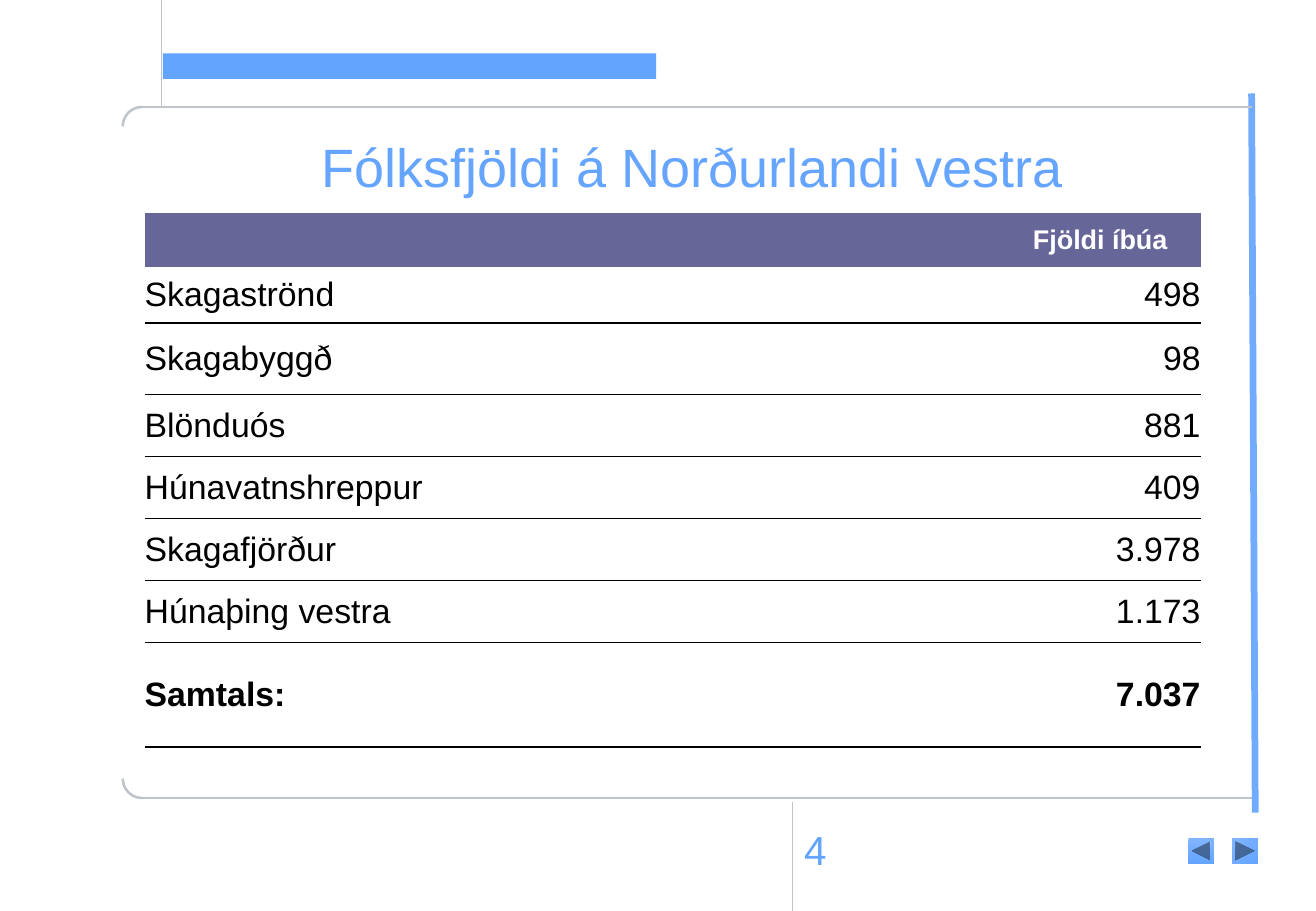
from dataclasses import dataclass

from lxml import etree
from pptx import Presentation
from pptx.dml.color import RGBColor
from pptx.enum.shapes import MSO_CONNECTOR, MSO_SHAPE
from pptx.enum.text import MSO_ANCHOR, MSO_AUTO_SIZE, PP_ALIGN
from pptx.oxml.ns import qn
from pptx.util import Pt

PX = 9144  # 100 px to the inch
STRAIGHT = MSO_CONNECTOR.STRAIGHT
ARC, BAR = MSO_SHAPE.ARC, MSO_SHAPE.RECTANGLE
NEXT = MSO_SHAPE.ACTION_BUTTON_FORWARD_OR_NEXT
PREVIOUS = MSO_SHAPE.ACTION_BUTTON_BACK_OR_PREVIOUS
LEFT, CENTER, RIGHT = PP_ALIGN.LEFT, PP_ALIGN.CENTER, PP_ALIGN.RIGHT
MIDDLE = MSO_ANCHOR.MIDDLE
NO_AUTOFIT = MSO_AUTO_SIZE.NONE


@dataclass(frozen=True)
class Theme:
    font: str = "Arial"
    accent: str = "63A4FF"
    title: str = "65A5FF"
    edge: str = "70ABFF"
    button_light: str = "80B4FF"
    frame: str = "BFC4CB"
    header: str = "666699"
    ink: str = "000000"
    paper: str = "FFFFFF"
    title_size: int = 32
    number_size: int = 24
    body_size: int = 20
    header_size: int = 16


THEME = Theme()
HEADER = ("", "Fjöldi íbúa")
POPULATION = [
    ("Skagaströnd", "498"),
    ("Skagabyggð", "98"),
    ("Blönduós", "881"),
    ("Húnavatnshreppur", "409"),
    ("Skagafjörður", "3.978"),
    ("Húnaþing vestra", "1.173"),
]
TOTAL = ("Samtals:", "7.037")
COLUMN_WIDTHS = (704, 165)
ROW_HEIGHTS = (45, 46, 59, 51, 51, 51, 51, 86)


def emu(*lengths):
    return [length * PX for length in lengths]


def rgb(color):
    return RGBColor.from_string(color)


def write(frame, text, size, color, align=LEFT, bold=False):
    frame.text = text
    paragraph = frame.paragraphs[0]
    paragraph.alignment = align
    for run in paragraph.runs:
        run.font.name, run.font.size, run.font.bold = THEME.font, Pt(size), bold
        run.font.color.rgb = rgb(color)


def add_rule(slide, start, end, color, width):
    rule = slide.shapes.add_connector(STRAIGHT, *emu(*start, *end))
    rule.line.color.rgb = rgb(color)
    rule.line.width = Pt(width)
    etree.SubElement(rule._element.spPr, qn("a:effectLst"))


def add_corner(slide, left, top, size, start_degrees):
    """Draw a quarter circle running clockwise from start_degrees."""
    corner = slide.shapes.add_shape(ARC, *emu(left, top, size, size))
    for index, degrees in enumerate((start_degrees, start_degrees + 90)):
        corner.adjustments[index] = degrees * 0.6
    corner.shadow.inherit = False
    corner.fill.background()
    corner.line.color.rgb = rgb(THEME.frame)
    corner.line.width = Pt(1.5)


def add_frame(slide, left, top, width, height):
    diameter = 32
    right, bottom = left + width, top + height
    rule_left = left + diameter // 2
    add_corner(slide, left, top, diameter, 180)
    add_corner(slide, left, bottom - diameter, diameter, 90)
    add_rule(slide, (rule_left, bottom), (right, bottom), THEME.frame, 1.5)
    add_rule(slide, (right, top - 11), (right + 3, bottom + 12), THEME.edge, 4)
    add_rule(slide, (rule_left, top), (right, top), THEME.frame, 1.5)


def add_header_bar(slide, left, top, width, height):
    add_rule(slide, (left - 1, 0), (left - 1, 88), THEME.frame, 0.75)
    bar = slide.shapes.add_shape(BAR, *emu(left, top, width, height))
    bar.shadow.inherit = False
    bar.fill.solid()
    bar.fill.fore_color.rgb = rgb(THEME.accent)
    bar.line.fill.background()


def add_button(slide, kind, left, top, size, angle):
    button = slide.shapes.add_shape(kind, *emu(left, top, size, size))
    button.shadow.inherit = False
    button.fill.gradient()
    button.fill.gradient_angle = angle
    for stop, color in zip(button.fill.gradient_stops, (THEME.button_light, THEME.title)):
        stop.color.rgb = rgb(color)
    button.line.fill.background()


def add_footer(slide, left, top, width, height):
    add_rule(slide, (left, top), (left, top + height), THEME.frame, 0.75)
    number = slide.shapes.add_textbox(*emu(left, top + 14, 126, 52))
    number.text_frame.word_wrap = True
    write(number.text_frame, "4", THEME.number_size, THEME.accent)
    size, pitch = 21, 36
    next_left = left + width - size
    add_button(slide, NEXT, next_left, top + 30, size, 315)
    add_button(slide, PREVIOUS, next_left - pitch, top + 30, size, 270)


def place_title(slide, left, top, width, height):
    title = slide.shapes.title
    title.left, title.top, title.width, title.height = emu(left, top, width, height)
    frame = title.text_frame
    frame.auto_size, frame.word_wrap, frame.vertical_anchor = NO_AUTOFIT, True, MIDDLE
    write(frame, "Fólksfjöldi á Norðurlandi vestra", THEME.title_size, THEME.title, CENTER)


def set_borders(cell, ruled_sides):
    properties = cell._tc.get_or_add_tcPr()
    for index, side in enumerate("LRTB"):
        border = etree.Element(qn(f"a:ln{side}"), w=str(Pt(1)))
        if side in ruled_sides:
            paint = etree.SubElement(border, qn("a:solidFill"))
            etree.SubElement(paint, qn("a:srgbClr"), val=THEME.ink)
        else:
            etree.SubElement(border, qn("a:noFill"))
        properties.insert(index, border)


def format_cell(cell, text, row, column):
    is_header, is_total = row == 0, row == len(ROW_HEIGHTS) - 1
    cell.margin_left = cell.margin_right = cell.margin_top = cell.margin_bottom = 0
    cell.vertical_anchor = MIDDLE
    if is_header:
        cell.fill.solid()
        cell.fill.fore_color.rgb = rgb(THEME.header)
        write(cell.text_frame, text, THEME.header_size, THEME.paper, CENTER, True)
    else:
        cell.fill.background()
        align = RIGHT if column else LEFT
        write(cell.text_frame, text, THEME.body_size, THEME.ink, align, is_total)
    set_borders(cell, "" if is_header else "B" if row == 1 else "TB")


def add_population_table(slide, left, top):
    records = [HEADER, *POPULATION, TOTAL]
    box = emu(left, top, sum(COLUMN_WIDTHS), sum(ROW_HEIGHTS))
    table = slide.shapes.add_table(len(records), len(HEADER), *box).table
    table.horz_banding = False
    for column, width in zip(table.columns, emu(*COLUMN_WIDTHS)):
        column.width = width
    for row, height in zip(table.rows, emu(*ROW_HEIGHTS)):
        row.height = height
    for row, record in enumerate(records):
        for column, text in enumerate(record):
            format_cell(table.cell(row, column), text, row, column)


def main():
    presentation = Presentation()
    presentation.slide_width, presentation.slide_height = emu(1083, 750)
    slide = presentation.slides.add_slide(presentation.slide_layouts[5])
    add_header_bar(slide, 134, 44, 406, 21)
    add_frame(slide, 101, 88, 929, 569)
    add_footer(slide, 652, 660, 383, 90)
    place_title(slide, 118, 110, 904, 53)
    add_population_table(slide, 119, 175)
    presentation.save("out.pptx")


if __name__ == "__main__":
    main()
